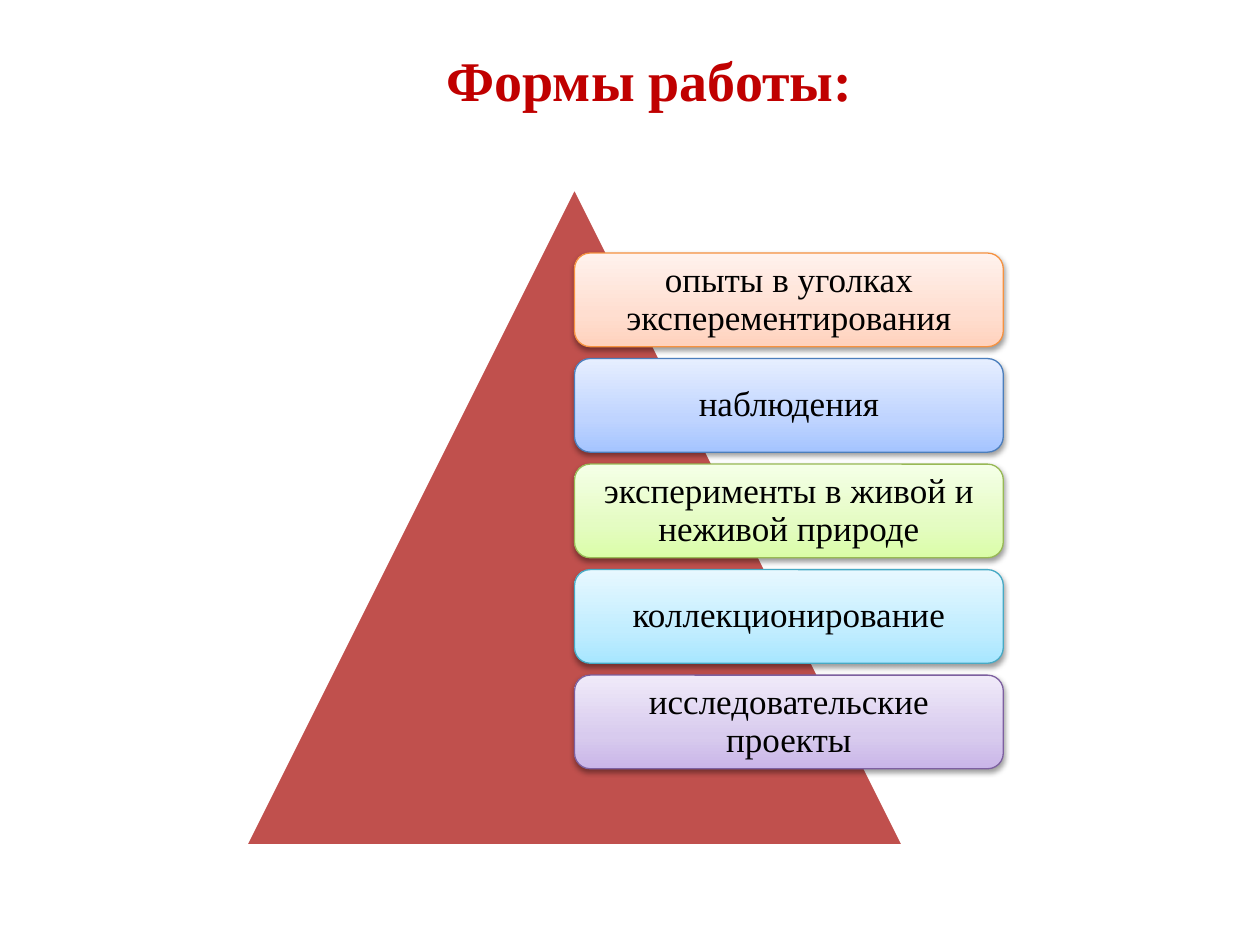
from copy import deepcopy

from lxml import etree
from pptx import Presentation
from pptx.dml.color import RGBColor
from pptx.enum.shapes import MSO_SHAPE
from pptx.enum.text import MSO_ANCHOR, PP_ALIGN
from pptx.oxml.ns import qn
from pptx.util import Pt

TRIANGLE = MSO_SHAPE.ISOSCELES_TRIANGLE
ROUNDED = MSO_SHAPE.ROUNDED_RECTANGLE
CENTER = PP_ALIGN.CENTER
MIDDLE = MSO_ANCHOR.MIDDLE

# Card text, outline, and gradient colours from bottom to top
CARDS = [
    ("опыты в уголках эксперементирования", "F69240", ("FFD2BD", "FFDED0", "FFF2ED")),
    ("наблюдения", "4B7EBC", ("A4C4FF", "BFD4FF", "E6EEFF")),
    ("эксперименты в живой и неживой природе", "98B955", ("DAFDA7", "E4FCC2", "F5FFE7")),
    ("коллекционирование", "46AAC5", ("A7E6FF", "C1EDFF", "E7F8FF")),
    ("исследовательские проекты", "7D60A0", ("C9B5E8", "D8CBEE", "F0EAF9")),
]
CARD_LEFT, CARD_TOP, CARD_WIDTH, CARD_HEIGHT = 328.3, 144.6, 245, 53.5
CARD_STEP = 60.3


def color(value):
    return RGBColor.from_string(value)


class SlideBuilder:
    font_name = "Times New Roman"
    gradient_positions = (0, 0.35, 1)

    def __init__(self, slide):
        self.slide = slide

    def label(self, shape, text, size, text_color, bold=False):
        text_frame = shape.text_frame
        text_frame.word_wrap = True
        text_frame.text = text
        paragraph = text_frame.paragraphs[0]
        paragraph.alignment = CENTER
        font = paragraph.runs[0].font
        font.name, font.size, font.bold = self.font_name, Pt(size), bold
        font.color.rgb = color(text_color)
        return paragraph

    def title(self, text, left, top, width, height):
        box = self.slide.shapes.add_textbox(Pt(left), Pt(top), Pt(width), Pt(height))
        self.label(box, text, 32, "C00000", bold=True)

    def shape(self, kind, left, top, width, height, line_color, line_width):
        shape = self.slide.shapes.add_shape(kind, Pt(left), Pt(top), Pt(width), Pt(height))
        shape.shadow.inherit = False
        shape.line.color.rgb = color(line_color)
        shape.line.width = Pt(line_width)
        return shape

    def triangle(self, left, top, width, height):
        shape = self.shape(TRIANGLE, left, top, width, height, "FFFFFF", 2)
        shape.fill.solid()
        shape.fill.fore_color.rgb = color("C0504D")

    def card(self, text, left, top, width, height, line_color, colors):
        shape = self.shape(ROUNDED, left, top, width, height, line_color, 0.75)
        self.gradient(shape, colors)
        self.drop_shadow(shape)
        paragraph = self.label(shape, text, 20, "000000")
        paragraph.line_spacing = 0.9
        text_frame = shape.text_frame
        text_frame.vertical_anchor = MIDDLE
        text_frame.margin_left = text_frame.margin_right = Pt(3)
        text_frame.margin_top = text_frame.margin_bottom = Pt(3)

    def gradient(self, shape, colors):
        fill = shape.fill
        fill.gradient()
        fill.gradient_angle = 90
        # The default gradient has two stops; a third one is needed
        stops = next(shape._element.spPr.iter(qn("a:gsLst")))
        stops.append(deepcopy(stops[-1]))
        for stop, position, value in zip(fill.gradient_stops, self.gradient_positions, colors):
            stop.position = position
            stop.color.rgb = color(value)

    def drop_shadow(self, shape):
        effects = shape._element.spPr.find(qn("a:effectLst"))
        shadow = etree.SubElement(
            effects, qn("a:outerShdw"), blurRad=str(Pt(3.1)), dist=str(Pt(1.6)),
            dir="5400000", rotWithShape="0")
        shade = etree.SubElement(shadow, qn("a:srgbClr"), val="000000")
        etree.SubElement(shade, qn("a:alpha"), val="38000")


def main():
    presentation = Presentation()
    presentation.slide_width, presentation.slide_height = Pt(720), Pt(540)
    builder = SlideBuilder(presentation.slides.add_slide(presentation.slide_layouts[6]))

    # Heading
    builder.title("Формы работы:", 67.5, 22.5, 607.5, 46)

    # Pyramid with the list of cards
    builder.triangle(140, 106.8, 376.6, 376.6)
    for index, (text, line_color, colors) in enumerate(CARDS):
        builder.card(text, CARD_LEFT, CARD_TOP + index * CARD_STEP,
                     CARD_WIDTH, CARD_HEIGHT, line_color, colors)

    presentation.save("out.pptx")


if __name__ == "__main__":
    main()
